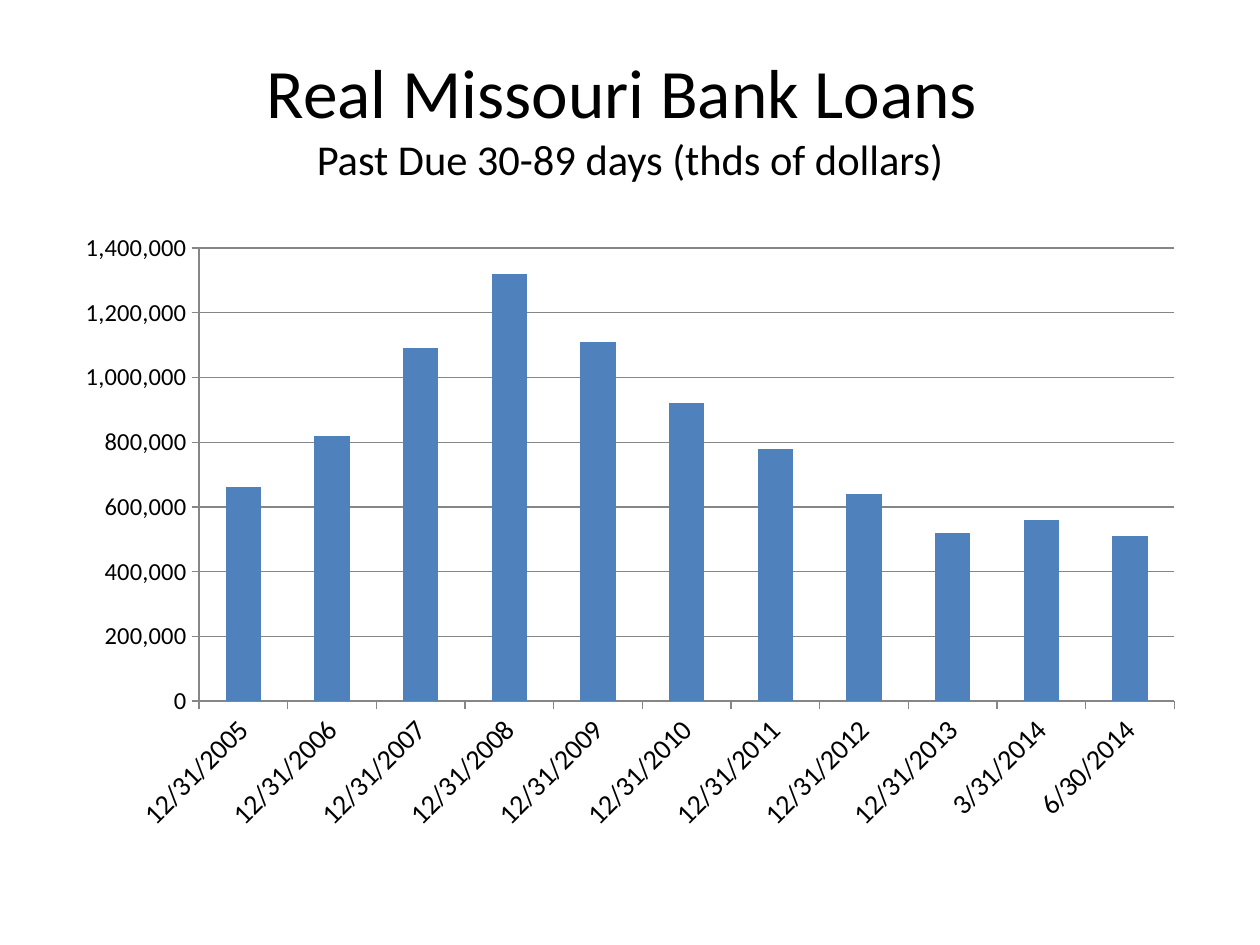
from pptx import Presentation
from pptx.chart.data import CategoryChartData
from pptx.dml.color import RGBColor
from pptx.enum.chart import XL_CHART_TYPE, XL_TICK_MARK
from pptx.enum.text import MSO_ANCHOR, PP_ALIGN
from pptx.util import Inches, Pt

# Content
TITLE_LINES = [
    ("Real Missouri Bank Loans ", 39.6),
    ("Past Due 30-89 days (thds of dollars)", 24.3),
]
PAST_DUE = [
    ("12/31/2005", 660000),
    ("12/31/2006", 820000),
    ("12/31/2007", 1090000),
    ("12/31/2008", 1320000),
    ("12/31/2009", 1110000),
    ("12/31/2010", 920000),
    ("12/31/2011", 780000),
    ("12/31/2012", 640000),
    ("12/31/2013", 520000),
    ("3/31/2014", 560000),
    ("6/30/2014", 510000),
]

FONT = "Calibri"
BLACK = RGBColor(0x00, 0x00, 0x00)
BLUE = RGBColor(0x4F, 0x81, 0xBD)
GRAY = RGBColor(0x86, 0x86, 0x86)


def style_font(font, size):
    font.name = FONT
    font.size = Pt(size)
    font.color.rgb = BLACK


def style_line(line):
    line.color.rgb = GRAY
    line.width = Pt(0.75)


def add_title(s):
    tf = s.shapes.add_textbox(Inches(0.5), Inches(0.3), Inches(9), Inches(1.25)).text_frame
    tf.word_wrap = True
    tf.vertical_anchor = MSO_ANCHOR.MIDDLE
    p = tf.paragraphs[0]
    p.alignment = PP_ALIGN.CENTER
    for i, (text, size) in enumerate(TITLE_LINES):
        if i:
            p.add_line_break()
        r = p.add_run()
        r.text = text
        style_font(r.font, size)


def add_loan_chart(s):
    dates, amounts = zip(*PAST_DUE)
    data = CategoryChartData(number_format="#,##0")
    data.categories = dates
    data.add_series("Series 1", amounts)
    chart = s.shapes.add_chart(
        XL_CHART_TYPE.COLUMN_CLUSTERED,
        Inches(0.5), Inches(1.75), Inches(9), Inches(4.95), data,
    ).chart
    chart.has_title = False
    chart.has_legend = False
    style_font(chart.font, 10)

    # Columns
    plot = chart.plots[0]
    plot.gap_width = 150
    plot.vary_by_categories = False
    fill = plot.series[0].format.fill
    fill.solid()
    fill.fore_color.rgb = BLUE

    # Axes
    for axis, size in ((chart.category_axis, 16), (chart.value_axis, 14)):
        axis.major_tick_mark = XL_TICK_MARK.OUTSIDE
        axis.minor_tick_mark = XL_TICK_MARK.NONE
        style_font(axis.tick_labels.font, size)
        style_line(axis.format.line)
    values = chart.value_axis
    values.minimum_scale = 0
    values.maximum_scale = 1400000
    values.major_unit = 200000
    values.tick_labels.number_format = "#,##0"
    values.tick_labels.number_format_is_linked = False
    values.has_major_gridlines = True
    style_line(values.major_gridlines.format.line)


def main():
    prs = Presentation()
    prs.slide_width = Inches(10)
    prs.slide_height = Inches(7.5)
    s = prs.slides.add_slide(prs.slide_layouts[6])
    add_title(s)
    add_loan_chart(s)
    prs.save("out.pptx")


if __name__ == "__main__":
    main()
